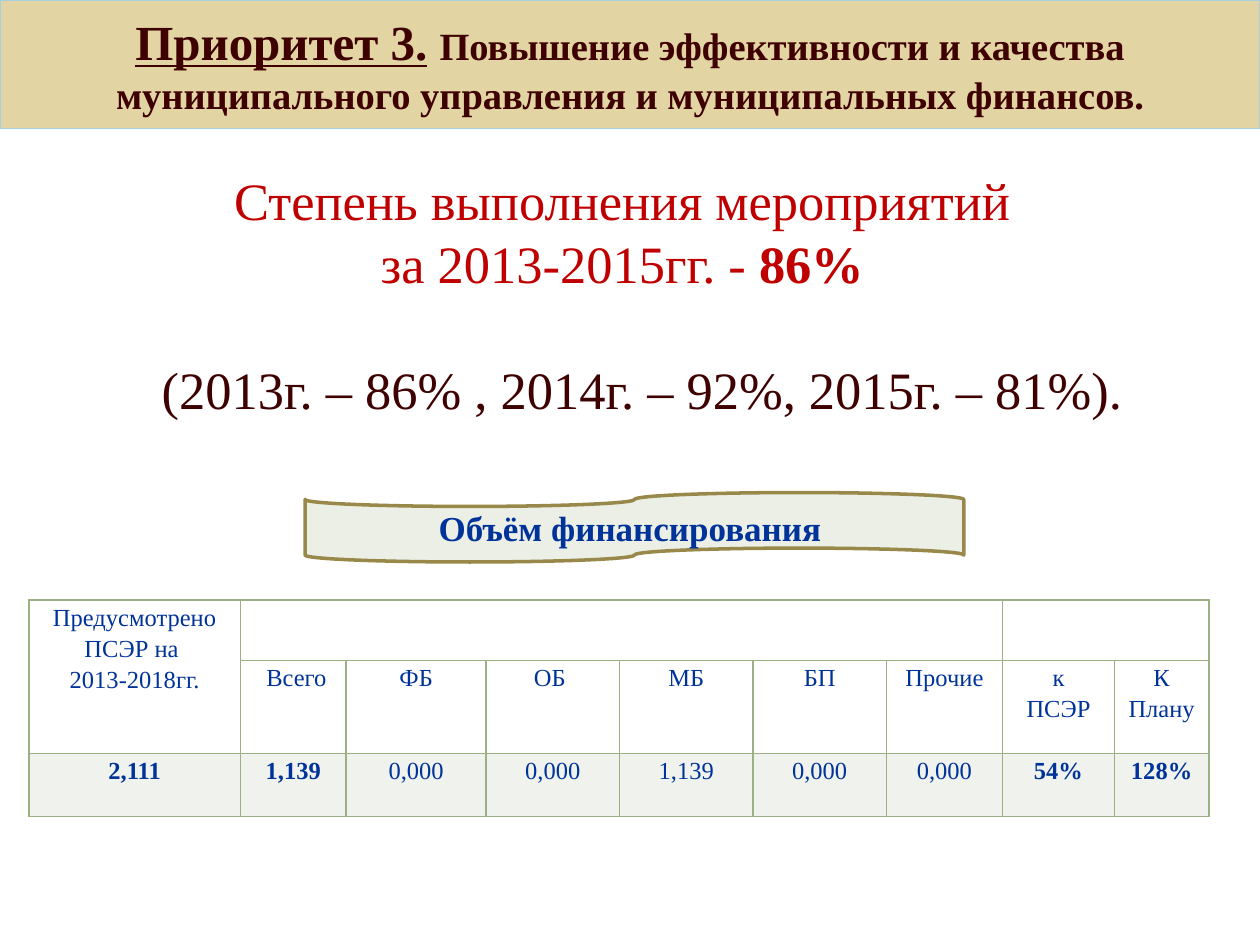
from lxml import etree
from pptx import Presentation
from pptx.dml.color import RGBColor
from pptx.enum.shapes import MSO_SHAPE
from pptx.enum.text import MSO_ANCHOR, MSO_AUTO_SIZE, PP_ALIGN
from pptx.oxml.ns import qn
from pptx.util import Cm, Pt

CENTER = PP_ALIGN.CENTER
TOP, MIDDLE = MSO_ANCHOR.TOP, MSO_ANCHOR.MIDDLE
NO_AUTOFIT = MSO_AUTO_SIZE.NONE
TAPE = MSO_SHAPE.FLOWCHART_PUNCHED_TAPE

MAROON = RGBColor(0x3E, 0x00, 0x00)
RED = RGBColor(0xC0, 0x00, 0x00)
BLUE = RGBColor(0x00, 0x33, 0x99)
SAND = RGBColor(0xE2, 0xD5, 0xA3)
SKY = RGBColor(0xA6, 0xD0, 0xDF)
OLIVE = RGBColor(0x98, 0x89, 0x4B)
PALE_GREEN = RGBColor(0xEB, 0xEF, 0xE6)
ROW_GREEN = RGBColor(0xEF, 0xF2, 0xED)
GRID_GREEN = RGBColor(0x9C, 0xB0, 0x84)
WHITE = RGBColor(0xFF, 0xFF, 0xFF)


class SlideBuilder:
    font_name = "Times New Roman"

    def __init__(self, presentation, layout_index):
        layout = presentation.slide_layouts[layout_index]
        self.slide = presentation.slides.add_slide(layout)

    def place(self, shape, left, top, width, height):
        box = {"left": left, "top": top, "width": width, "height": height}
        for name, value in box.items():
            setattr(shape, name, Cm(value))

    def paint(self, shape, fill, line, weight):
        shape.fill.solid()
        shape.fill.fore_color.rgb = fill
        shape.line.color.rgb = line
        shape.line.width = Pt(weight)

    def add_text(self, text_frame, paragraphs, size, color, **paragraph_format):
        """Each paragraph is a list of (text, font format) runs."""
        for index, runs in enumerate(paragraphs):
            paragraph = (text_frame.add_paragraph() if index
                         else text_frame.paragraphs[0])
            settings = {"alignment": CENTER, **paragraph_format}
            for name, value in settings.items():
                setattr(paragraph, name, value)
            for text, font_format in runs:
                run = paragraph.add_run()
                run.text = text
                font = {"name": self.font_name, "size": Pt(size),
                        "bold": False, **font_format}
                run.font.color.rgb = color
                for name, value in font.items():
                    setattr(run.font, name, value)

    def title(self, box, runs, size):
        shape = self.slide.shapes.title
        self.place(shape, *box)
        self.paint(shape, SAND, SKY, 0.75)
        shape.text_frame.auto_size = NO_AUTOFIT
        shape.text_frame.vertical_anchor = MIDDLE
        self.add_text(shape.text_frame, [runs], size, MAROON)

    def body(self, box, paragraphs, size):
        shape = self.slide.placeholders[1]
        self.place(shape, *box)
        text_frame = shape.text_frame
        text_frame.auto_size = NO_AUTOFIT
        text_frame.vertical_anchor = TOP
        self.add_text(text_frame, paragraphs, size, RED,
                      line_spacing=Pt(36), space_before=Pt(0))
        for paragraph in text_frame.paragraphs:
            properties = paragraph._p.get_or_add_pPr()
            properties.set("marL", "0")
            properties.set("indent", "0")
            etree.SubElement(properties, qn("a:buNone"))
        return text_frame

    def banner(self, box, text, size):
        shape = self.slide.shapes.add_shape(TAPE, *map(Cm, box))
        shape.shadow.inherit = False
        self.paint(shape, PALE_GREEN, OLIVE, 2)
        shape.text_frame.word_wrap = True
        shape.text_frame.vertical_anchor = MIDDLE
        self.add_text(shape.text_frame, [[(text, {"bold": True})]], size, BLUE)

    def border(self, cell):
        properties = cell._tc.get_or_add_tcPr()
        for side in ("a:lnL", "a:lnR", "a:lnT", "a:lnB"):
            line = etree.SubElement(properties, qn(side), w=str(Pt(1)))
            fill = etree.SubElement(line, qn("a:solidFill"))
            etree.SubElement(fill, qn("a:srgbClr"), val=str(GRID_GREEN))

    def table(self, left, top, widths, heights, rows, merges, bold_columns, size):
        frame = self.slide.shapes.add_table(
            len(rows), len(widths), Cm(left), Cm(top),
            Cm(sum(widths)), Cm(sum(heights)))
        table = frame.table
        table.first_row = table.horz_banding = False
        for column, width in zip(table.columns, widths):
            column.width = Cm(width)
        for row, height in zip(table.rows, heights):
            row.height = Cm(height)
        last = len(rows) - 1
        for row_index, row in enumerate(rows):
            for column_index, text in enumerate(row):
                cell = table.cell(row_index, column_index)
                self.border(cell)
                cell.fill.solid()
                cell.fill.fore_color.rgb = ROW_GREEN if row_index == last else WHITE
                cell.margin_left = cell.margin_right = Cm(0.18)
                cell.margin_top = cell.margin_bottom = 0
                if text:
                    bold = row_index == last and column_index in bold_columns
                    lines = [[(line, {"bold": bold})] for line in text.split("\n")]
                    self.add_text(cell.text_frame, lines, size, BLUE,
                                  line_spacing=1.15)
        for first, final in merges:
            table.cell(*first).merge(table.cell(*final))


def main():
    presentation = Presentation()
    presentation.slide_width, presentation.slide_height = Cm(25.4), Cm(19.05)
    builder = SlideBuilder(presentation, 1)

    # Heading band
    builder.title((0, 0, 25.4, 2.59), [
        ("Приоритет 3.", {"size": Pt(28), "bold": True, "underline": True}),
        (" ", {"size": Pt(28)}),
        ("Повышение эффективности и качества муниципального управления "
         "и муниципальных финансов.", {"bold": True}),
    ], 22)

    # Degree of completion, with the yearly figures set apart below
    text_frame = builder.body((0.58, 3.25, 24.2, 5.4), [
        [("Степень выполнения мероприятий ", {})],
        [("за 2013-2015гг. - ", {}), ("86% ", {"bold": True})],
        [("(2013г. – 86% , 2014г. – 92%, 2015г. – 81%).", {})],
    ], 30)
    yearly = text_frame.paragraphs[2]
    yearly.space_before = Pt(36)
    yearly._p.get_or_add_pPr().set("marL", str(Pt(15)))
    yearly.runs[0].font.color.rgb = MAROON

    # Financing
    builder.banner((6.15, 9.93, 13.28, 1.4), "Объём финансирования ", 20)
    builder.table(
        0.58, 12.1,
        widths=[4.27, 2.13, 2.82, 2.69, 2.69, 2.69, 2.34, 2.26, 1.9],
        heights=[1.21, 1.88, 1.27],
        rows=[
            ["Предусмотрено ПСЭР на \n2013-2018гг."] + [""] * 8,
            ["", " Всего", "ФБ", "ОБ ", "МБ", "БП", "Прочие",
             "к\nПСЭР", "К Плану"],
            ["2,111", "1,139", "0,000", "0,000", "1,139", "0,000", "0,000",
             "54%", "128%"],
        ],
        merges=[((0, 0), (1, 0)), ((0, 1), (0, 6)), ((0, 7), (0, 8))],
        bold_columns=(0, 1, 7, 8), size=14)

    presentation.save("out.pptx")


if __name__ == "__main__":
    main()
